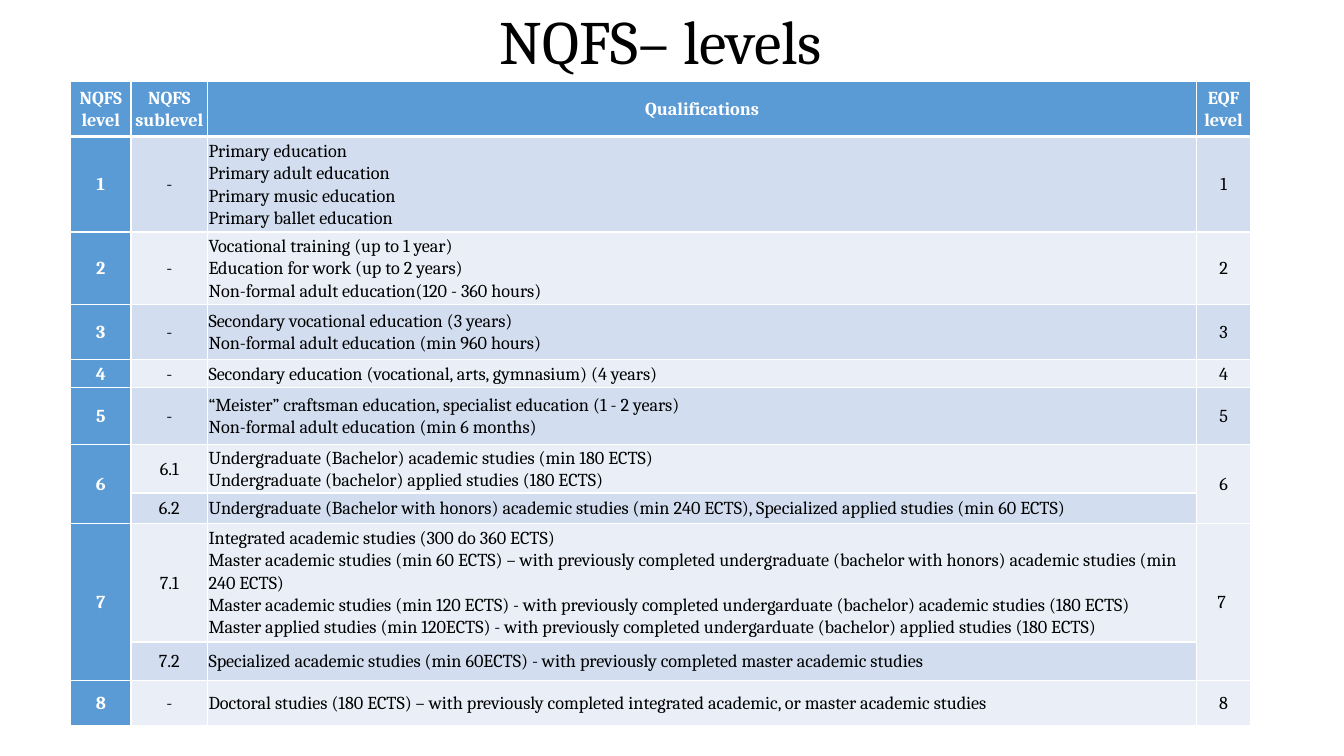
from lxml.etree import SubElement
from pptx import Presentation
from pptx.dml.color import RGBColor
from pptx.enum.text import MSO_ANCHOR, PP_ALIGN
from pptx.oxml.ns import qn
from pptx.util import Pt

COLORS = {"header": "5B9BD5", "odd": "D2DEEF", "even": "EAEFF7",
          "line": "FFFFFF", "light": "FFFFFF", "dark": "000000"}
FONT = "Cambria"
COLUMN_WIDTHS = [43.2, 54.7, 706.3, 38.9]

# Height, NQFS level, sublevel, qualifications, EQF level
ROWS = [
    (39.6, "NQFS level", "NQFS sublevel", ["Qualifications"], "EQF level"),
    (67.7, "1", "-", ["Primary education",
                      "Primary adult education",
                      "Primary music education",
                      "Primary ballet education"], "1"),
    (51.1, "2", "-", ["Vocational training (up to 1 year)",
                      "Education for work (up to 2 years)",
                      "Non-formal adult education(120 - 360 hours)"], "2"),
    (39.6, "3", "-", ["Secondary vocational education (3 years)",
                      "Non-formal adult education (min 960 hours)"], "3"),
    (20.2, "4", "-", ["Secondary education (vocational, arts, gymnasium) (4 years)"], "4"),
    (40.3, "5", "-", ["“Meister” craftsman education, specialist education (1 - 2 years)",
                      "Non-formal adult education (min 6 months)"], "5"),
    (33.8, "6", "6.1", ["Undergraduate (Bachelor) academic studies (min 180 ECTS)",
                        "Undergraduate (bachelor) applied studies (180 ECTS)"], "6"),
    (21.6, "", "6.2", ["Undergraduate (Bachelor with honors) academic studies (min 240 ECTS), "
                       "Specialized applied studies (min 60 ECTS)"], ""),
    (81, "7", "7.1", ["Integrated academic studies (300 do 360 ECTS)",
                      "Master academic studies (min 60 ECTS) – with previously completed "
                      "undergraduate (bachelor with honors) academic studies (min 240 ECTS)",
                      "Master academic studies (min 120 ECTS) - with previously completed "
                      "undergarduate (bachelor) academic studies (180 ECTS)",
                      "Master applied studies (min 120ECTS) - with previously completed "
                      "undergarduate (bachelor) applied studies (180 ECTS)"], "7 "),
    (27.4, "", "7.2", ["Specialized academic studies (min 60ECTS) - with previously completed "
                       "master academic studies"], ""),
    (32.4, "8", "-", ["Doctoral studies (180 ECTS) – with previously completed "
                      "integrated academic, or master academic studies"], "8"),
]


def style_paragraph(para, size, color, align, spacing, bold=False):
    para.alignment = align
    para.line_spacing = spacing
    for span in para.runs:
        span.font.name = FONT
        span.font.size = Pt(size)
        span.font.bold = bold
        span.font.color.rgb = RGBColor.from_string(COLORS[color])


def add_borders(cell, top, bottom):
    """Draw the four cell edges; top and bottom are widths in points."""
    properties = cell._tc.get_or_add_tcPr()
    for edge, width in (("L", 1), ("R", 1), ("T", top), ("B", bottom)):
        line = SubElement(properties, qn(f"a:ln{edge}"), w=str(Pt(width)))
        fill = SubElement(line, qn("a:solidFill"))
        SubElement(fill, qn("a:srgbClr"), val=COLORS["line"])


deck = Presentation()
deck.slide_width, deck.slide_height = Pt(960), Pt(540)
page = deck.slides.add_slide(deck.slide_layouts[6])

title_box = page.shapes.add_textbox(Pt(58.3), Pt(5.8), Pt(828), Pt(52.6))
title = title_box.text_frame
title.word_wrap = True
title.vertical_anchor = MSO_ANCHOR.MIDDLE
title.text = "NQFS– levels"
style_paragraph(title.paragraphs[0], 44, "dark", PP_ALIGN.CENTER, 0.9)

table = page.shapes.add_table(
    len(ROWS), len(COLUMN_WIDTHS), Pt(50.4), Pt(58),
    Pt(sum(COLUMN_WIDTHS)), Pt(sum(row[0] for row in ROWS))).table
for column, width in zip(table.columns, COLUMN_WIDTHS):
    column.width = Pt(width)

for row_index, (height, level, sublevel, qualifications, eqf) in enumerate(ROWS):
    table.rows[row_index].height = Pt(height)
    texts = [level, sublevel, "\n".join(qualifications), eqf]
    for column_index, text in enumerate(texts):
        cell = table.cell(row_index, column_index)
        is_header = row_index == 0 or column_index == 0
        band = "odd" if row_index % 2 else "even"
        add_borders(cell, top=3 if row_index == 1 else 1, bottom=3 if row_index == 0 else 1)
        cell.fill.solid()
        cell.fill.fore_color.rgb = RGBColor.from_string(COLORS["header" if is_header else band])
        cell.vertical_anchor = MSO_ANCHOR.MIDDLE
        inset = Pt(0 if column_index == 3 else 0.7)
        cell.margin_left = cell.margin_right = cell.margin_top = cell.margin_bottom = inset
        cell.text_frame.text = text
        is_list = column_index == 2 and row_index > 0
        for para in cell.text_frame.paragraphs:
            style_paragraph(para, 13, "light" if is_header else "dark",
                            PP_ALIGN.LEFT if is_list else PP_ALIGN.CENTER, 1.07, is_header)

for first_row in (6, 8):
    for column_index in (0, 3):
        table.cell(first_row, column_index).merge(table.cell(first_row + 1, column_index))

deck.save("out.pptx")
